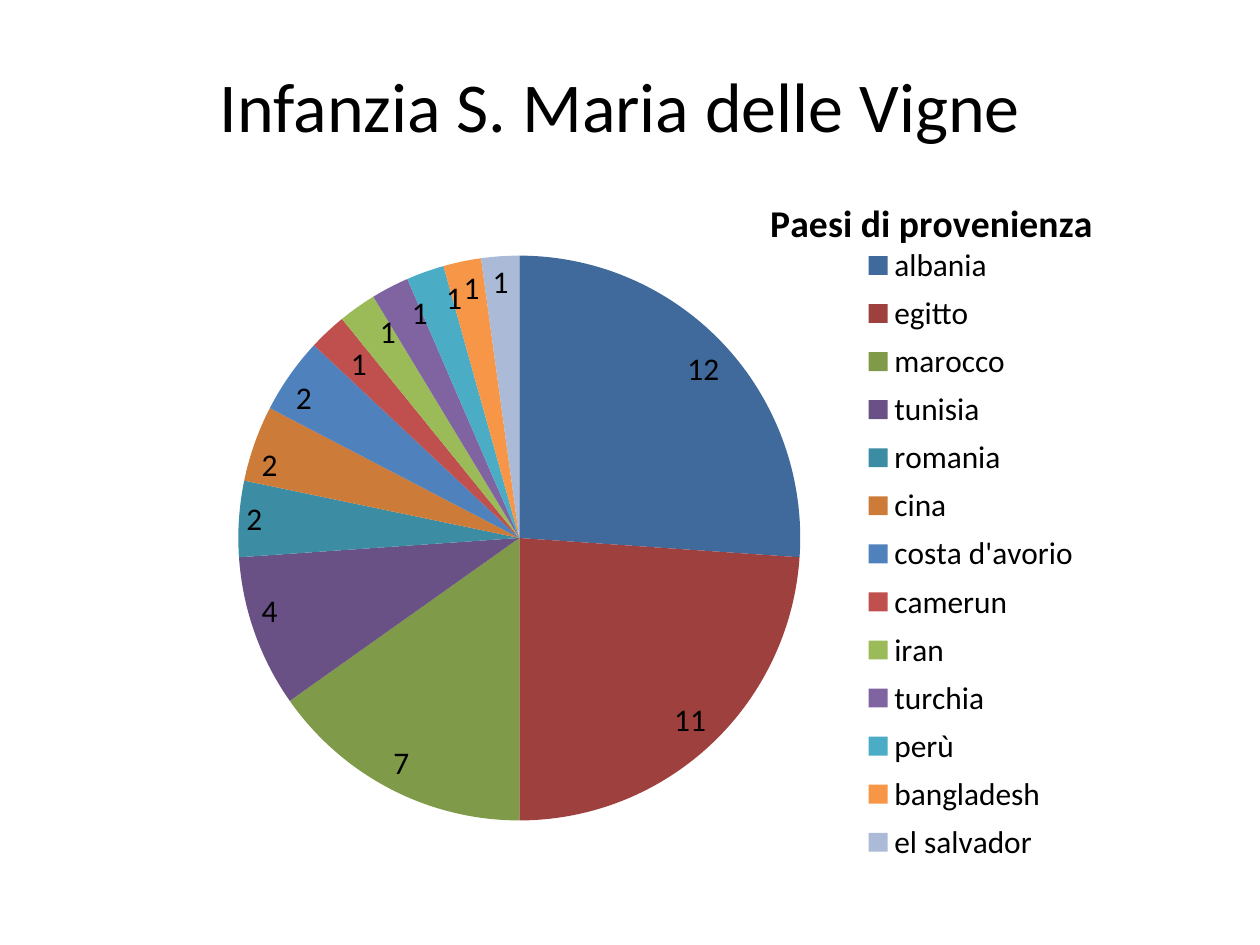
import pptx
import pptx.util
import pptx.chart.data
import pptx.dml.color
import pptx.enum.chart
import pptx.enum.text
import pptx.oxml
import pptx.oxml.ns

Inches, Pt = pptx.util.Inches, pptx.util.Pt
RGB = pptx.dml.color.RGBColor.from_string

THEME = {
    "font": "Calibri",
    "ink": "000000",
    "title_size": 40,
    "chart_title_size": 21.6,
    "chart_size": 18,
}

HEADING = "Infanzia S. Maria delle Vigne"
CHART_TITLE = "Paesi di provenienza"
COUNTRIES = [
    ("albania", 12, "40699C"),
    ("egitto", 11, "9E413E"),
    ("marocco", 7, "7F9A48"),
    ("tunisia", 4, "695185"),
    ("romania", 2, "3C8DA3"),
    ("cina", 2, "CC7B38"),
    ("costa d'avorio", 2, "4F81BD"),
    ("camerun", 1, "C0504D"),
    ("iran", 1, "9BBB59"),
    ("turchia", 1, "8064A2"),
    ("perù", 1, "4BACC6"),
    ("bangladesh", 1, "F79646"),
    ("el salvador", 1, "AABAD7"),
]
LABEL_SHIFTS = {"camerun": (0.02, 0.01), "iran": (0.02, 0), "turchia": (0.02, 0), "perù": (0.02, 0)}


def style(font, size, bold=False):
    font.name = THEME["font"]
    font.size = Pt(size)
    font.bold = bold
    font.color.rgb = RGB(THEME["ink"])


def place(part, index, modes, **fractions):
    for old in part.findall(pptx.oxml.ns.qn("c:layout")):
        part.remove(old)
    settings = [(f"{side}Mode", "edge") for side in modes]
    settings += list(fractions.items())
    rows = "".join(f'<c:{tag} val="{value}"/>' for tag, value in settings)
    part.insert(index, pptx.oxml.parse_xml(
        f'<c:layout {pptx.oxml.ns.nsdecls("c")}><c:manualLayout>{rows}</c:manualLayout></c:layout>'))


def add_heading(slide):
    heading = slide.shapes.title
    heading.left, heading.top = Inches(0.67), Inches(0.36)
    heading.width, heading.height = Inches(8.5), Inches(0.94)
    heading.text_frame.vertical_anchor = pptx.enum.text.MSO_ANCHOR.MIDDLE
    line = heading.text_frame.paragraphs[0]
    line.alignment = pptx.enum.text.PP_ALIGN.CENTER
    run = line.add_run()
    run.text = HEADING
    style(run.font, THEME["title_size"])


def add_origin_chart(slide):
    origins = pptx.chart.data.CategoryChartData()
    origins.categories = [name for name, _, _ in COUNTRIES]
    origins.add_series(CHART_TITLE, [count for _, count, _ in COUNTRIES])
    chart = slide.shapes.add_chart(
        pptx.enum.chart.XL_CHART_TYPE.PIE,
        Inches(1.38), Inches(0.68), Inches(7.35), Inches(6.3), origins).chart
    style(chart.font, THEME["chart_size"])

    chart.has_title = True
    run = chart.chart_title.text_frame.paragraphs[0].add_run()
    run.text = CHART_TITLE
    style(run.font, THEME["chart_title_size"], bold=True)
    place(chart.chart_title._element, 1, "xy", x=0.64, y=0.13)

    chart.has_legend = True
    chart.legend.position = pptx.enum.chart.XL_LEGEND_POSITION.RIGHT
    chart.legend.include_in_layout = False
    style(chart.legend.font, THEME["chart_size"])
    place(chart.legend._element, 1, "xy", x=0.74, y=0.19, w=0.25, h=0.8)

    plot = chart.plots[0]
    plot.vary_by_categories = True
    place(chart._chartSpace.chart.plotArea, 0, "xy", x=0.07, y=0.21, w=0.61, h=0.72)

    inside_end = pptx.enum.chart.XL_LABEL_POSITION.INSIDE_END
    pie = plot.series[0]
    pie.data_labels.show_value = True
    pie.data_labels.position = inside_end
    style(pie.data_labels.font, THEME["chart_size"])
    for index, (name, _, colour) in enumerate(COUNTRIES):
        slice_ = pie.points[index]
        slice_.format.fill.solid()
        slice_.format.fill.fore_color.rgb = RGB(colour)
        slice_.format.line.fill.background()
        if name in LABEL_SHIFTS:
            label = slice_.data_label
            label.position = inside_end
            style(label.font, THEME["chart_size"])
            across, down = LABEL_SHIFTS[name]
            entry = pie.data_labels._element.xpath(f'c:dLbl[c:idx/@val="{index}"]')[0]
            place(entry, 1, "", x=across, y=down)


def main():
    deck = pptx.Presentation()
    deck.slide_width, deck.slide_height = Inches(10), Inches(7.5)
    slide = deck.slides.add_slide(deck.slide_layouts[0])
    subtitle = slide.placeholders[1].element
    subtitle.getparent().remove(subtitle)
    add_heading(slide)
    add_origin_chart(slide)
    deck.save("out.pptx")


if __name__ == "__main__":
    main()
